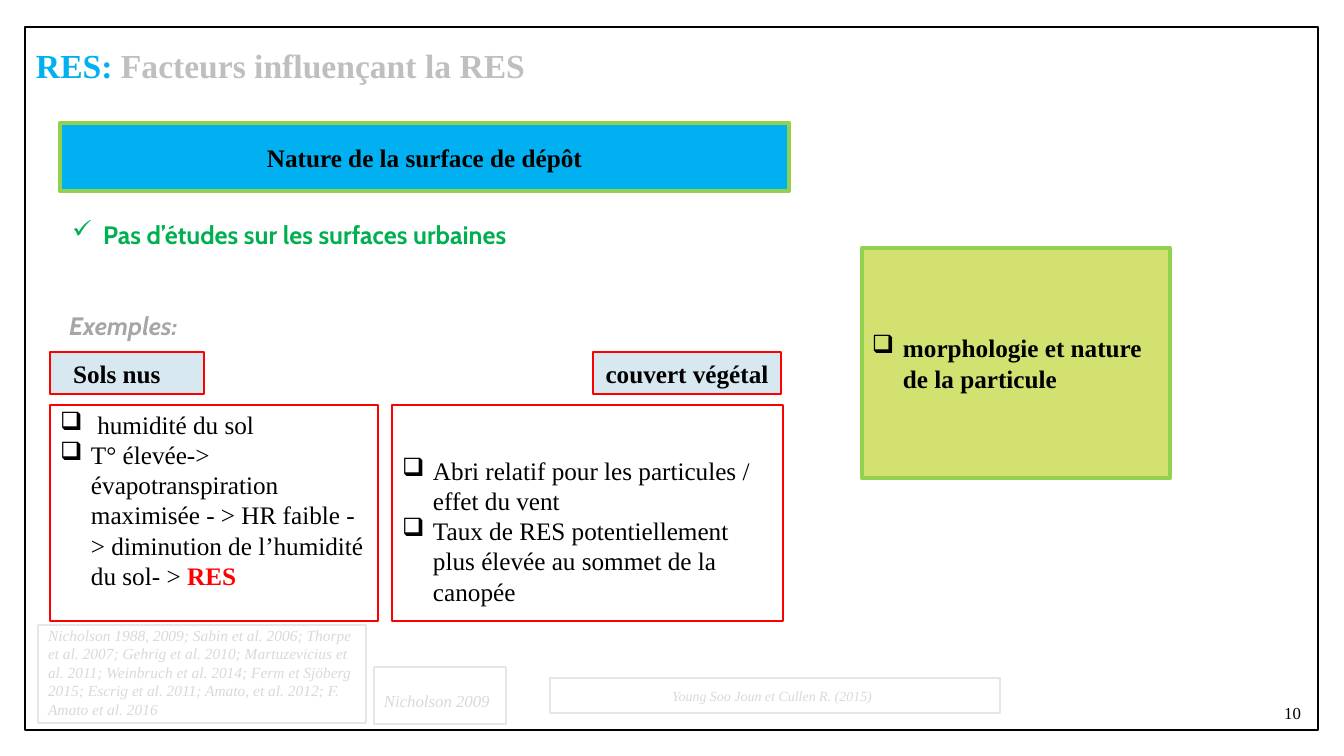
from pptx import Presentation
from pptx.dml.color import RGBColor
from pptx.enum.shapes import MSO_SHAPE
from pptx.enum.text import MSO_ANCHOR, PP_ALIGN
from pptx.oxml.ns import qn
from pptx.util import Emu, Pt
from lxml.etree import SubElement

EMU_PER_PX = 914400 / 100.8

BLACK = RGBColor(0x00, 0x00, 0x00)
WHITE = RGBColor(0xFF, 0xFF, 0xFF)
BLUE = RGBColor(0x00, 0xB0, 0xF0)
PALE_BLUE = RGBColor(0xD8, 0xE8, 0xF1)
GREEN = RGBColor(0x00, 0xB0, 0x50)
LIGHT_GREEN = RGBColor(0x92, 0xD0, 0x50)
OLIVE = RGBColor(0xD3, 0xE1, 0x71)
RED = RGBColor(0xFF, 0x00, 0x00)
TITLE_GREY = RGBColor(0xBF, 0xBF, 0xBF)
LABEL_GREY = RGBColor(0xA6, 0xA6, 0xA6)
SOURCE_GREY = RGBColor(0xD9, 0xD9, 0xD9)
BORDER_GREY = RGBColor(0xE6, 0xE6, 0xE6)

SERIF = "Times New Roman"
SANS = "Cabin"
BULLET_INDENT = 31


def px(n):
    return Emu(round(n * EMU_PER_PX))


def place(sp, at):
    sp.left, sp.top, sp.width, sp.height = map(px, at)


def add_text(p, text, size=18, font=SERIF, color=BLACK, bold=False, italic=False):
    r = p.add_run()
    r.text = text
    f = r.font
    f.size, f.name, f.bold, f.italic = Pt(size), font, bold, italic
    f.color.rgb = color


def add_bullet(p, char):
    pPr = p._p.get_or_add_pPr()
    pPr.set("marL", str(px(BULLET_INDENT)))
    pPr.set("indent", str(-px(BULLET_INDENT)))
    SubElement(pPr, qn("a:buChar")).set("char", char)


def set_frame(tf, anchor=MSO_ANCHOR.MIDDLE, left=10, top=0, right=10):
    tf.word_wrap = True
    tf.vertical_anchor = anchor
    tf.margin_left, tf.margin_top, tf.margin_right = px(left), px(top), px(right)
    tf.margin_bottom = 0


def add_box(s, at, fill=None, line=None, width=1.5, shape=MSO_SHAPE.RECTANGLE, **frame):
    sp = s.shapes.add_shape(shape, *map(px, at))
    sp.shadow.inherit = False
    if fill is None:
        sp.fill.background()
    else:
        sp.fill.solid()
        sp.fill.fore_color.rgb = fill
    if line is None:
        sp.line.fill.background()
    else:
        sp.line.color.rgb = line
        sp.line.width = Pt(width)
    set_frame(sp.text_frame, **frame)
    return sp.text_frame


def write(tf, *paragraphs, align=PP_ALIGN.LEFT, bullet=None, **fmt):
    """Fill a frame; each paragraph is a string or a list of (text, overrides)."""
    for i, content in enumerate(paragraphs):
        p = tf.add_paragraph() if i else tf.paragraphs[0]
        p.alignment = align
        if bullet:
            add_bullet(p, bullet)
        runs = [(content, {})] if isinstance(content, str) else content
        for text, extra in runs:
            add_text(p, text, **{**fmt, **extra})


def add_title(s):
    title = s.shapes.title
    place(title, (26, 26, 771, 78))
    set_frame(title.text_frame)
    write(title.text_frame,
          [("RES: ", {"color": BLUE}), ("Facteurs influençant la RES", {})],
          size=24, color=TITLE_GREY, bold=True)


def add_source(s, at, text, size, align=PP_ALIGN.LEFT, **frame):
    tf = add_box(s, at, WHITE, BORDER_GREY, **frame)
    write(tf, text, align=align, size=size, color=SOURCE_GREY, italic=True)


def add_factor(s, label, label_at, label_frame, label_align, body_at, body_top, items):
    """A pale label above a red-edged box of bulleted items."""
    write(add_box(s, label_at, PALE_BLUE, RED, **label_frame), label,
          align=label_align, bold=True)
    tf = add_box(s, body_at, WHITE, RED, anchor=MSO_ANCHOR.TOP, top=body_top)
    write(tf, *items, bullet="❑")


def main():
    prs = Presentation()
    prs.slide_width, prs.slide_height = px(1344), px(756)
    s = prs.slides.add_slide(prs.slide_layouts[5])

    add_box(s, (25, 27, 1293, 703), line=BLACK, width=1)
    add_title(s)
    write(add_box(s, (60, 123, 729, 68), BLUE, LIGHT_GREEN, 3),
          "Nature de la surface de dépôt", align=PP_ALIGN.CENTER, bold=True)

    rounded = MSO_SHAPE.ROUNDED_RECTANGLE
    write(add_box(s, (61, 223, 642, 22), shape=rounded),
          "Pas d’études sur les surfaces urbaines",
          bullet="✓", font=SANS, color=GREEN, bold=True)
    write(add_box(s, (58, 314, 642, 22), shape=rounded), "Exemples:",
          font=SANS, color=LABEL_GREY, bold=True, italic=True)

    add_factor(s, "Sols nus", (50, 352, 154, 42), {"left": 23}, PP_ALIGN.LEFT,
               (50, 405, 328, 216), 4,
               [" humidité du sol",
                [("T° élevée-> évapotranspiration maximisée - > HR faible "
                  "- > diminution de l’humidité du sol- > ", {}),
                 ("RES", {"color": RED, "bold": True})]])
    add_factor(s, "couvert végétal", (593, 352, 188, 42), {}, PP_ALIGN.CENTER,
               (392, 405, 391, 216), 50,
               ["Abri relatif pour les particules / effet du vent",
                "Taux de RES potentiellement plus élevée au sommet de la canopée"])

    write(add_box(s, (862, 248, 308, 230), OLIVE, LIGHT_GREEN, 3),
          "morphologie et nature de la particule", bullet="❑", bold=True)

    add_source(s, (38, 625, 328, 98),
               "Nicholson 1988, 2009; Sabin et al. 2006; Thorpe et al. 2007; "
               "Gehrig et al. 2010; Martuzevicius et al. 2011; Weinbruch et al. 2014; "
               "Ferm et Sjöberg 2015; Escrig et al. 2011; Amato, et al. 2012; "
               "F. Amato et al. 2016", 11, anchor=MSO_ANCHOR.TOP, top=1)
    add_source(s, (374, 667, 132, 57), "Nicholson 2009", 12,
               anchor=MSO_ANCHOR.TOP, top=24)
    add_source(s, (550, 678, 450, 35), "Young Soo Joun et Cullen R. (2015)", 10,
               align=PP_ALIGN.CENTER, right=16)

    number = s.shapes.add_textbox(*map(px, (1123, 693, 188, 40)))
    set_frame(number.text_frame)
    write(number.text_frame, "10", align=PP_ALIGN.RIGHT, size=12)

    prs.save("out.pptx")


if __name__ == "__main__":
    main()
